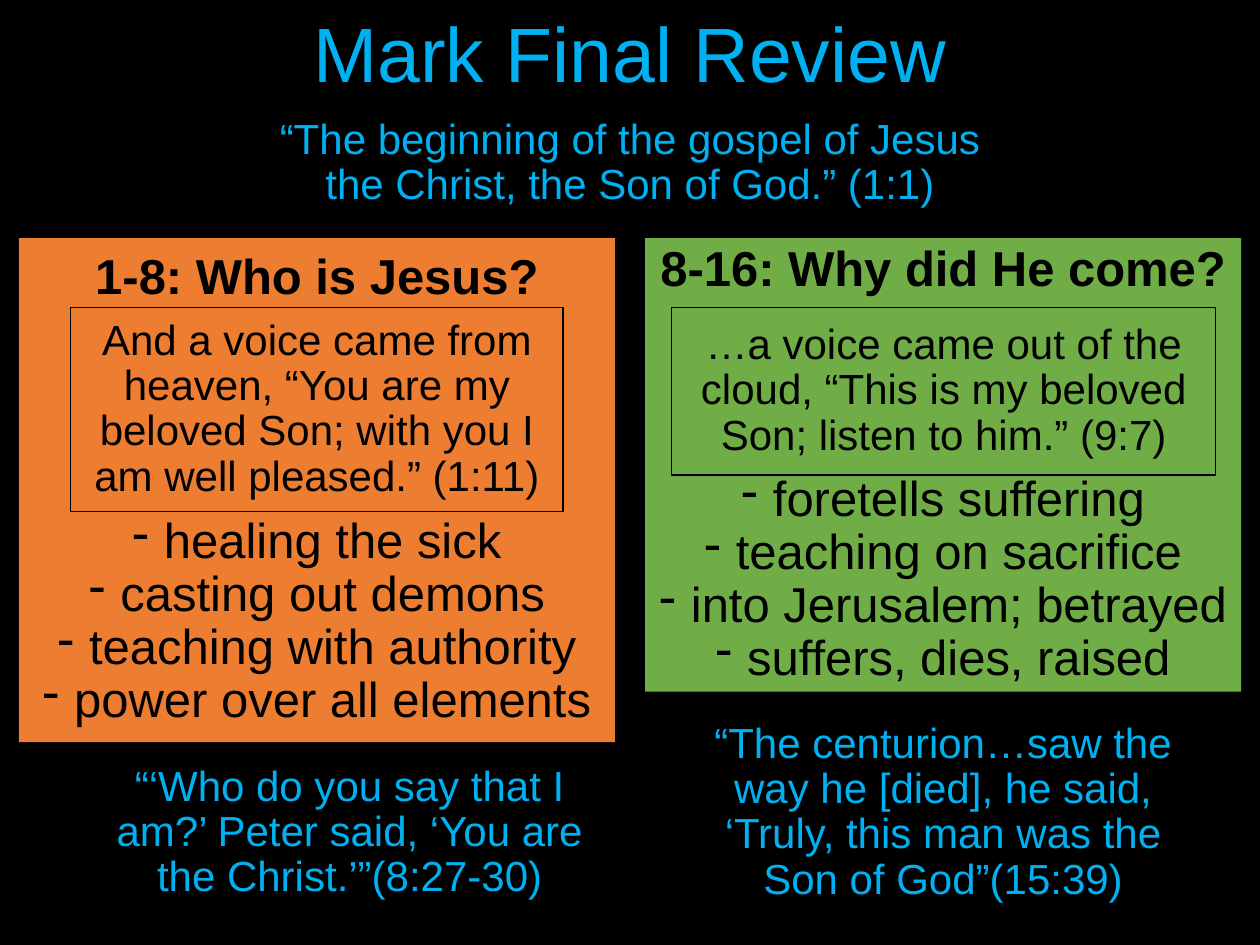
"""Build the Mark Final Review slide."""
from dataclasses import dataclass
from typing import Optional

from lxml import etree
from pptx import Presentation
from pptx import util as u
from pptx.dml.color import RGBColor
from pptx.enum import shapes, text
from pptx.oxml import ns

BLACK = RGBColor(0x00, 0x00, 0x00)
SKY = RGBColor(0x00, 0xB0, 0xF0)
ORANGE = RGBColor(0xED, 0x7D, 0x31)
GREEN = RGBColor(0x70, 0xAD, 0x47)
FONT = "Arial"
LINE_SPACING = 0.9
HANG = u.Inches(0.25)
PANEL_TOP, PANEL_WIDTH, VERSE_TOP = 1.89, 4.73, 2.44


@dataclass(frozen=True)
class Box:
    left: float
    top: float
    width: float
    height: float

    def lengths(self) -> tuple:
        return tuple(u.Inches(side) for side in (self.left, self.top, self.width, self.height))


@dataclass(frozen=True)
class Caption:
    words: str
    box: Box
    size: int = 24


@dataclass(frozen=True)
class Panel:
    heading: str
    box: Box
    fill: RGBColor
    anchor: text.MSO_ANCHOR
    verse: Caption
    verse_gap: int
    points: tuple


CAPTIONS = (
    Caption("Mark Final Review", Box(0.69, 0.07, 8.62, 0.77), 44),
    Caption("“The beginning of the gospel of Jesus the Christ, the Son of God.” (1:1)",
            Box(2.01, 0.9, 5.98, 0.79)),
    Caption("“‘Who do you say that I am?’ Peter said, ‘You are the Christ.’”(8:27-30)",
            Box(0.69, 6.02, 4.17, 1.18)),
    Caption("“The centurion…saw the way he [died], he said, "
            "‘Truly, this man was the Son of God”(15:39)",
            Box(5.4, 5.7, 4.17, 1.5)),
)

PANELS = (
    Panel("1-8: Who is Jesus?", Box(0.15, PANEL_TOP, PANEL_WIDTH, 4), ORANGE,
          text.MSO_ANCHOR.MIDDLE,
          Caption("And a voice came from heaven, “You are my beloved Son; "
                  "with you I am well pleased.” (1:11)",
                  Box(0.56, VERSE_TOP, 3.91, 1.62)),
          121,
          ("healing the sick", "casting out demons",
           "teaching with authority", "power over all elements")),
    Panel("8-16: Why did He come?", Box(5.12, PANEL_TOP, PANEL_WIDTH, 3.6), GREEN,
          text.MSO_ANCHOR.TOP,
          Caption("…a voice came out of the cloud, “This is my beloved Son; "
                  "listen to him.” (9:7)",
                  Box(5.33, VERSE_TOP, 4.32, 1.33)),
          101,
          ("foretells suffering", "teaching on sacrifice",
           "into Jerusalem; betrayed", "suffers, dies, raised")),
)


def write(paragraph, words: str, size: int, color: RGBColor, bold: bool = False,
          bullet: Optional[str] = None) -> None:
    if bullet:
        properties = paragraph._p.get_or_add_pPr()
        properties.set("marL", str(HANG))
        properties.set("indent", str(-HANG))
        etree.SubElement(properties, ns.qn("a:buChar")).set("char", bullet)
    paragraph.text = words
    paragraph.alignment = text.PP_ALIGN.CENTER
    paragraph.line_spacing = LINE_SPACING
    font = paragraph.font
    font.name, font.size, font.bold = FONT, u.Pt(size), bold
    font.color.rgb = color


def prepare(frame, anchor: text.MSO_ANCHOR):
    frame.word_wrap = True
    frame.vertical_anchor = anchor
    return frame.paragraphs[0]


def draw_caption(slide, caption: Caption) -> None:
    frame = slide.shapes.add_textbox(*caption.box.lengths()).text_frame
    write(prepare(frame, text.MSO_ANCHOR.MIDDLE), caption.words, caption.size, SKY)


def add_rectangle(slide, box: Box):
    rectangle = slide.shapes.add_shape(shapes.MSO_SHAPE.RECTANGLE, *box.lengths())
    rectangle.shadow.inherit = False
    return rectangle


def draw_verse(slide, verse: Caption) -> None:
    outline = add_rectangle(slide, verse.box)
    outline.fill.background()
    outline.line.color.rgb = BLACK
    outline.line.width = u.Pt(0.75)
    write(prepare(outline.text_frame, text.MSO_ANCHOR.MIDDLE), verse.words, verse.size, BLACK)


def draw_panel(slide, panel: Panel) -> None:
    background = add_rectangle(slide, panel.box)
    background.fill.solid()
    background.fill.fore_color.rgb = panel.fill
    background.line.fill.background()
    frame = background.text_frame
    write(prepare(frame, panel.anchor), panel.heading, 28, BLACK, bold=True)
    for point in panel.points:
        write(frame.add_paragraph(), point, 28, BLACK, bullet="-")
    frame.paragraphs[1].space_before = u.Pt(panel.verse_gap)
    draw_verse(slide, panel.verse)


def main() -> None:
    deck = Presentation()
    deck.slide_width, deck.slide_height = u.Inches(10), u.Inches(7.5)
    slide = deck.slides.add_slide(deck.slide_layouts[6])
    slide.background.fill.solid()
    slide.background.fill.fore_color.rgb = BLACK
    for caption in CAPTIONS:
        draw_caption(slide, caption)
    for panel in PANELS:
        draw_panel(slide, panel)
    deck.save("out.pptx")


if __name__ == "__main__":
    main()
